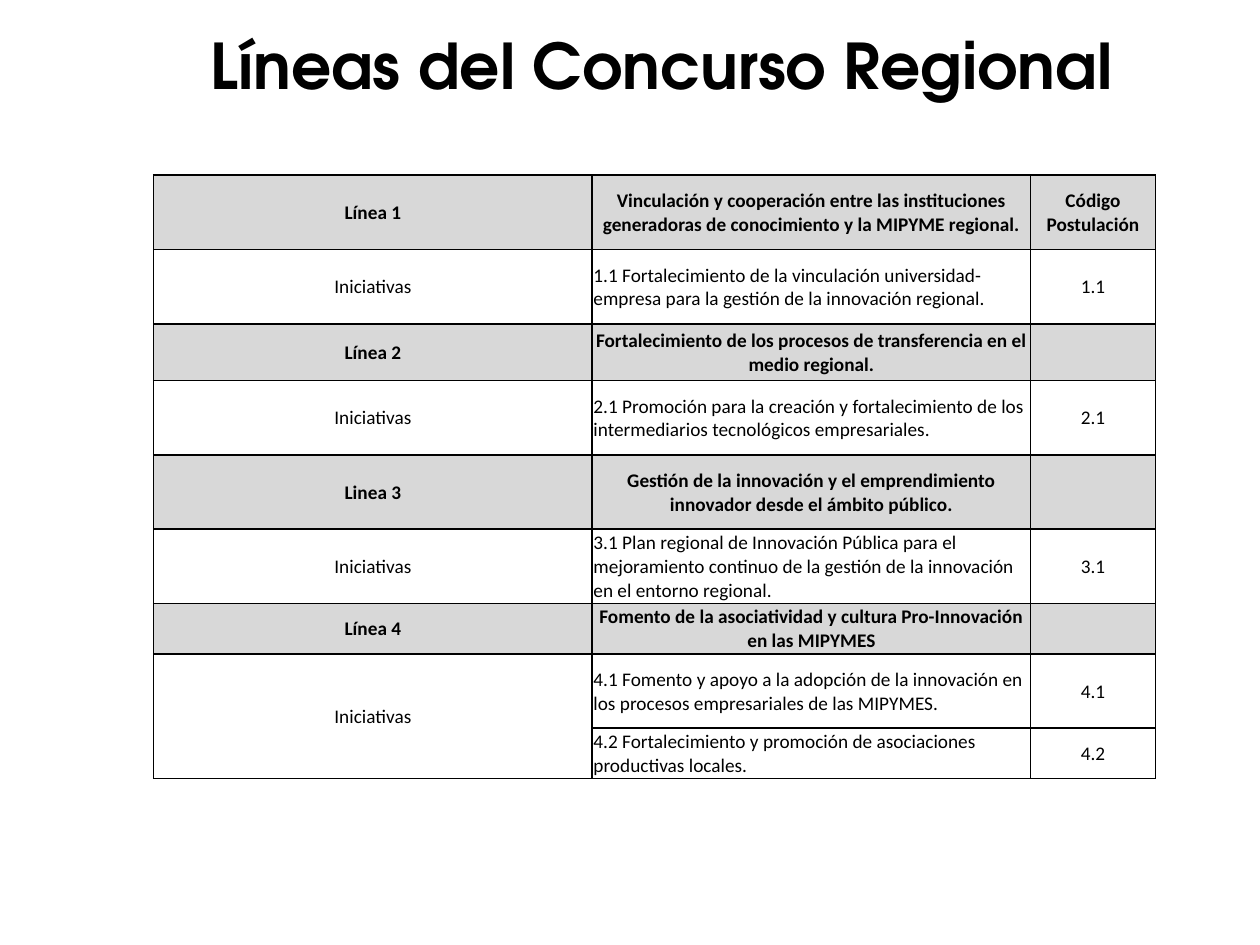
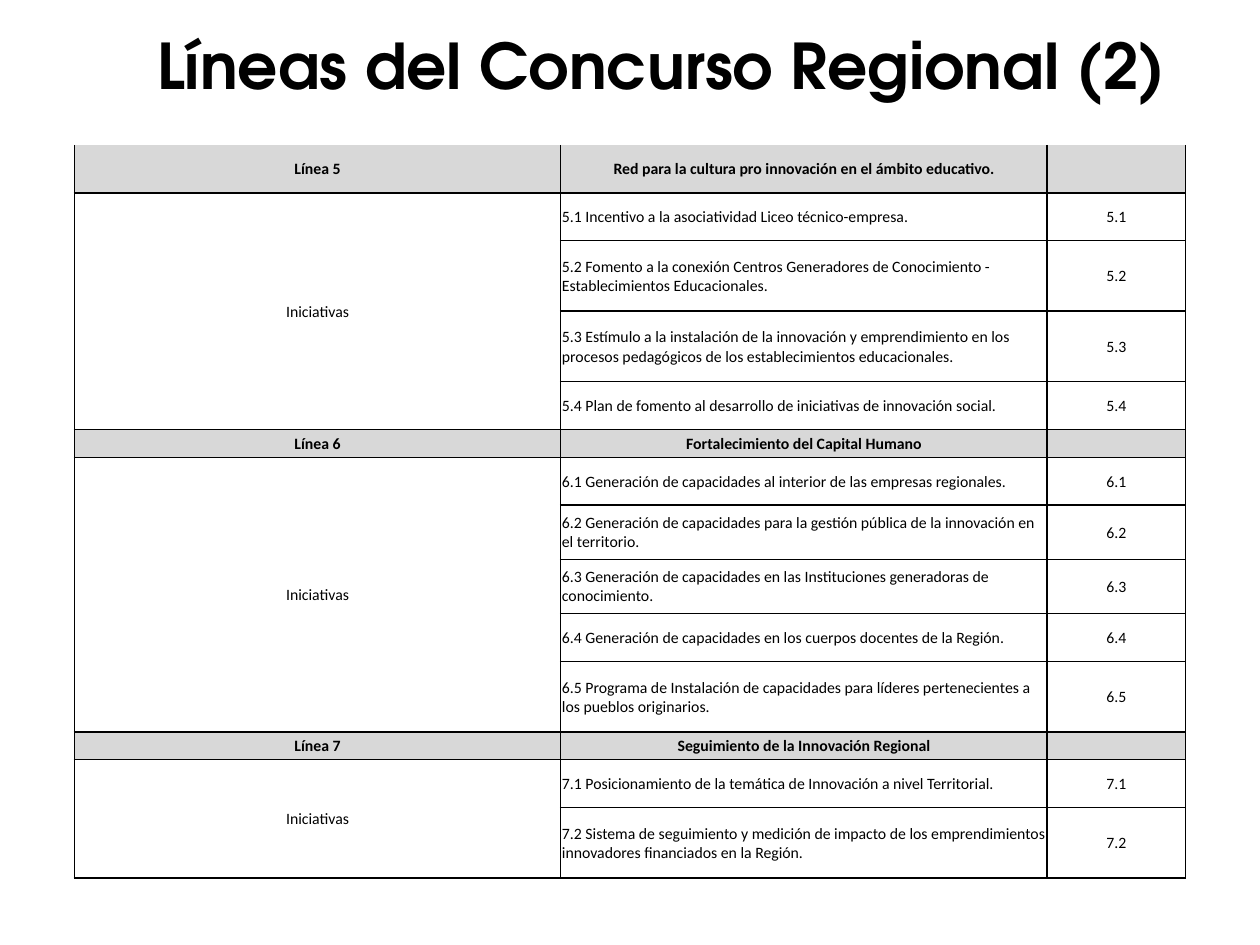
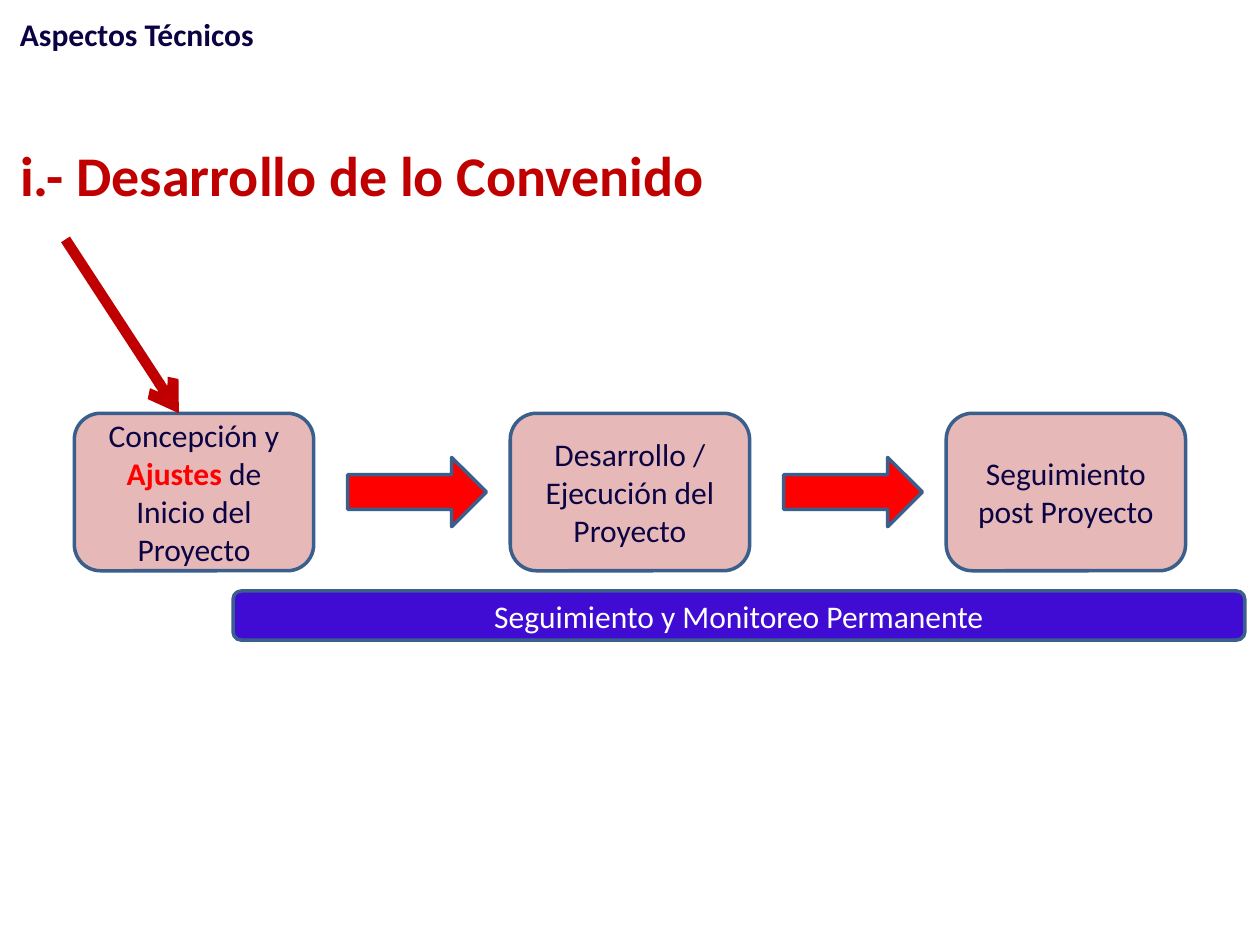
from dataclasses import dataclass

from lxml.etree import SubElement
from pptx import Presentation
from pptx.dml.color import RGBColor as Rgb
from pptx.enum.shapes import MSO_CONNECTOR as Connector, MSO_SHAPE as Preset
from pptx.enum.text import MSO_ANCHOR as Anchor, MSO_AUTO_SIZE as AutoSize, PP_ALIGN as Align
from pptx.oxml.ns import qn
from pptx.util import Pt

PX = 9144


@dataclass(frozen=True)
class Theme:
    black: str = "000000"
    white: str = "FFFFFF"
    band: str = "D8D8D8"
    navy: str = "0B0244"
    crimson: str = "C00000"
    red: str = "FF0000"
    pink: str = "E6B9B8"
    violet: str = "400CD4"
    outline: str = "3A5F8C"
    body_font: str = "Calibri"
    title_font: str = "TeX Gyre Adventor"
    title_size: int = 36
    heading_size: int = 32
    body_size: int = 18


theme = Theme()


def write(frame, parts, size, color, bold=False, align=Align.CENTER, anchor=Anchor.MIDDLE, font=theme.body_font):
    frame.word_wrap = True
    frame.auto_size = AutoSize.NONE
    frame.vertical_anchor = anchor
    paragraph = frame.paragraphs[0]
    paragraph.alignment = align
    for text, emphasized in parts:
        run = paragraph.add_run()
        run.text = text
        run.font.name = font
        run.font.size = Pt(size)
        run.font.bold = bold or emphasized
        run.font.color.rgb = Rgb.from_string(theme.red if emphasized else color)


def add_box(slide, preset, bounds, fill):
    shape = slide.shapes.add_shape(preset, *(value * PX for value in bounds))
    shape.shadow.inherit = False
    shape.fill.solid()
    shape.fill.fore_color.rgb = Rgb.from_string(fill)
    shape.line.color.rgb = Rgb.from_string(theme.outline)
    shape.line.width = Pt(2)
    return shape


presentation = Presentation()
presentation.slide_width = 1000 * PX
presentation.slide_height = 750 * PX
title_only = presentation.slide_layouts[5]

contest_tables = [
    {
        "title": "Líneas del Concurso Regional",
        "position": (122, 139),
        "columns": (348, 348, 99),
        "rows": (59, 59, 45, 59, 59, 59, 40, 59, 40),
        "size": 11,
        "top_border": True,
        "lines": [
            ("Línea 1", "Vinculación y cooperación entre las instituciones generadoras de conocimiento y la MIPYME regional.",
             "Código Postulación", [
                 "1.1 Fortalecimiento de la vinculación universidad-empresa para la gestión de la innovación regional.",
             ]),
            ("Línea 2", "Fortalecimiento de los procesos de transferencia en el medio regional.", "", [
                "2.1 Promoción para la creación y fortalecimiento de los intermediarios tecnológicos empresariales.",
            ]),
            ("Linea 3", "Gestión de la innovación y el emprendimiento innovador desde el ámbito público.", "", [
                "3.1 Plan regional de Innovación Pública para el mejoramiento continuo de la gestión de la innovación en el entorno regional.",
            ]),
            ("Línea 4", "Fomento de la asociatividad y cultura Pro-Innovación en las MIPYMES", "", [
                "4.1 Fomento y apoyo a la adopción de la innovación en los procesos empresariales de las MIPYMES.",
                "4.2 Fortalecimiento y promoción de asociaciones productivas locales.",
            ]),
        ],
    },
    {
        "title": "Líneas del Concurso Regional (2)",
        "position": (59, 115),
        "columns": (386, 386, 110),
        "rows": (38, 38, 56, 56, 38, 22, 38, 43, 43, 38, 56, 22, 38, 56),
        "size": 9,
        "top_border": False,
        "lines": [
            ("Línea 5", "Red para la cultura pro innovación en el ámbito educativo.", "", [
                "5.1 Incentivo a la asociatividad Liceo técnico-empresa.",
                "5.2 Fomento a la conexión Centros Generadores de Conocimiento - Establecimientos Educacionales.",
                "5.3 Estímulo a la instalación de la innovación y emprendimiento en los procesos pedagógicos de los establecimientos educacionales.",
                "5.4 Plan de fomento al desarrollo de iniciativas de innovación social.",
            ]),
            ("Línea 6", "Fortalecimiento del Capital Humano", "", [
                "6.1 Generación de capacidades al interior de las empresas regionales.",
                "6.2 Generación de capacidades para la gestión pública de la innovación en el territorio.",
                "6.3 Generación de capacidades en las Instituciones generadoras de conocimiento.",
                "6.4 Generación de capacidades en los cuerpos docentes de la Región.",
                "6.5 Programa de Instalación de capacidades para líderes pertenecientes a los pueblos originarios.",
            ]),
            ("Línea 7", "Seguimiento de la Innovación Regional", "", [
                "7.1 Posicionamiento de la temática de Innovación a nivel Territorial.",
                "7.2 Sistema de seguimiento y medición de impacto de los emprendimientos innovadores financiados en la Región.",
            ]),
        ],
    },
]

for contest in contest_tables:
    slide = presentation.slides.add_slide(title_only)
    title = slide.shapes.title
    title.left, title.top, title.width, title.height = 75 * PX, 13 * PX, 900 * PX, 76 * PX
    write(title.text_frame, [(contest["title"], False)], theme.title_size, theme.black, bold=True, font=theme.title_font)

    records = []
    merges = []
    for name, topic, code_heading, initiatives in contest["lines"]:
        records.append((True, (name, topic, code_heading)))
        merges.append((len(records), len(records) + len(initiatives) - 1))
        for index, initiative in enumerate(initiatives):
            label = "Iniciativas" if index == 0 else ""
            records.append((False, (label, initiative, initiative.split()[0])))

    left, top = contest["position"]
    columns, rows = contest["columns"], contest["rows"]
    table = slide.shapes.add_table(
        len(rows), len(columns), left * PX, top * PX, sum(columns) * PX, sum(rows) * PX
    ).table
    table.first_row = False
    table.horz_banding = False
    for column, width in zip(table.columns, columns):
        column.width = width * PX
    for row, height in zip(table.rows, rows):
        row.height = height * PX

    for row_index, (is_heading, texts) in enumerate(records):
        for column_index, text in enumerate(texts):
            cell = table.cell(row_index, column_index)
            cell.margin_left = cell.margin_right = cell.margin_top = PX
            cell.margin_bottom = 0
            cell.vertical_anchor = Anchor.MIDDLE
            properties = cell._tc.get_or_add_tcPr()
            for side in ("lnL", "lnR", "lnT", "lnB"):
                border = SubElement(properties, qn(f"a:{side}"), w=str(Pt(1)))
                if side == "lnT" and row_index == 0 and not contest["top_border"]:
                    SubElement(border, qn("a:noFill"))
                else:
                    fill = SubElement(border, qn("a:solidFill"))
                    SubElement(fill, qn("a:srgbClr"), val=theme.black)
            cell.fill.solid()
            cell.fill.fore_color.rgb = Rgb.from_string(theme.band if is_heading else theme.white)
            paragraph = cell.text_frame.paragraphs[0]
            if text:
                paragraph.text = text
                is_initiative = column_index == 1 and not is_heading
                paragraph.alignment = Align.LEFT if is_initiative else Align.CENTER
                font = paragraph.runs[0].font
                font.name = theme.body_font
                font.size = Pt(contest["size"])
                font.bold = is_heading
                font.color.rgb = Rgb.from_string(theme.black)
            else:
                SubElement(paragraph._p, qn("a:endParaRPr"), sz=str(contest["size"] * 100))
    for first, last in merges:
        if last > first:
            table.cell(first, 0).merge(table.cell(last, 0))

slide = presentation.slides.add_slide(title_only)
section = slide.shapes.add_textbox(6 * PX, 0, 518 * PX, 47 * PX)
write(section.text_frame, [("Aspectos Técnicos", False)], theme.body_size, theme.navy,
      bold=True, align=Align.LEFT, anchor=Anchor.BOTTOM)
title = slide.shapes.title
title.left, title.top, title.width, title.height = 6 * PX, 99 * PX, 998 * PX, 71 * PX
write(title.text_frame, [("i.- Desarrollo de lo Convenido", False)], theme.heading_size, theme.crimson,
      bold=True, align=Align.LEFT, anchor=Anchor.BOTTOM)

stages = [
    [("Concepción y ", False), ("Ajustes", True), (" de Inicio del Proyecto", False)],
    [("Desarrollo / Ejecución del Proyecto", False)],
    [("Seguimiento post Proyecto", False)],
]
stage_step = 346
for index, parts in enumerate(stages):
    offset = index * stage_step
    stage = add_box(slide, Preset.ROUNDED_RECTANGLE, (59 + offset, 328, 190, 125), theme.pink)
    write(stage.text_frame, parts, theme.body_size, theme.navy)
    if index < len(stages) - 1:
        add_box(slide, Preset.RIGHT_ARROW, (276 + offset, 363, 110, 55), theme.red)

monitoring = add_box(slide, Preset.ROUNDED_RECTANGLE, (185, 469, 803, 39), theme.violet)
write(monitoring.text_frame, [("Seguimiento y Monitoreo Permanente", False)], theme.body_size, theme.white)

pointer = slide.shapes.add_connector(Connector.STRAIGHT, 52 * PX, 190 * PX, 142 * PX, 328 * PX)
pointer.line.color.rgb = Rgb.from_string(theme.crimson)
pointer.line.width = Pt(6)
SubElement(pointer.line._get_or_add_ln(), qn("a:tailEnd"), type="arrow")
SubElement(pointer._element.spPr, qn("a:effectLst"))

presentation.save("out.pptx")
